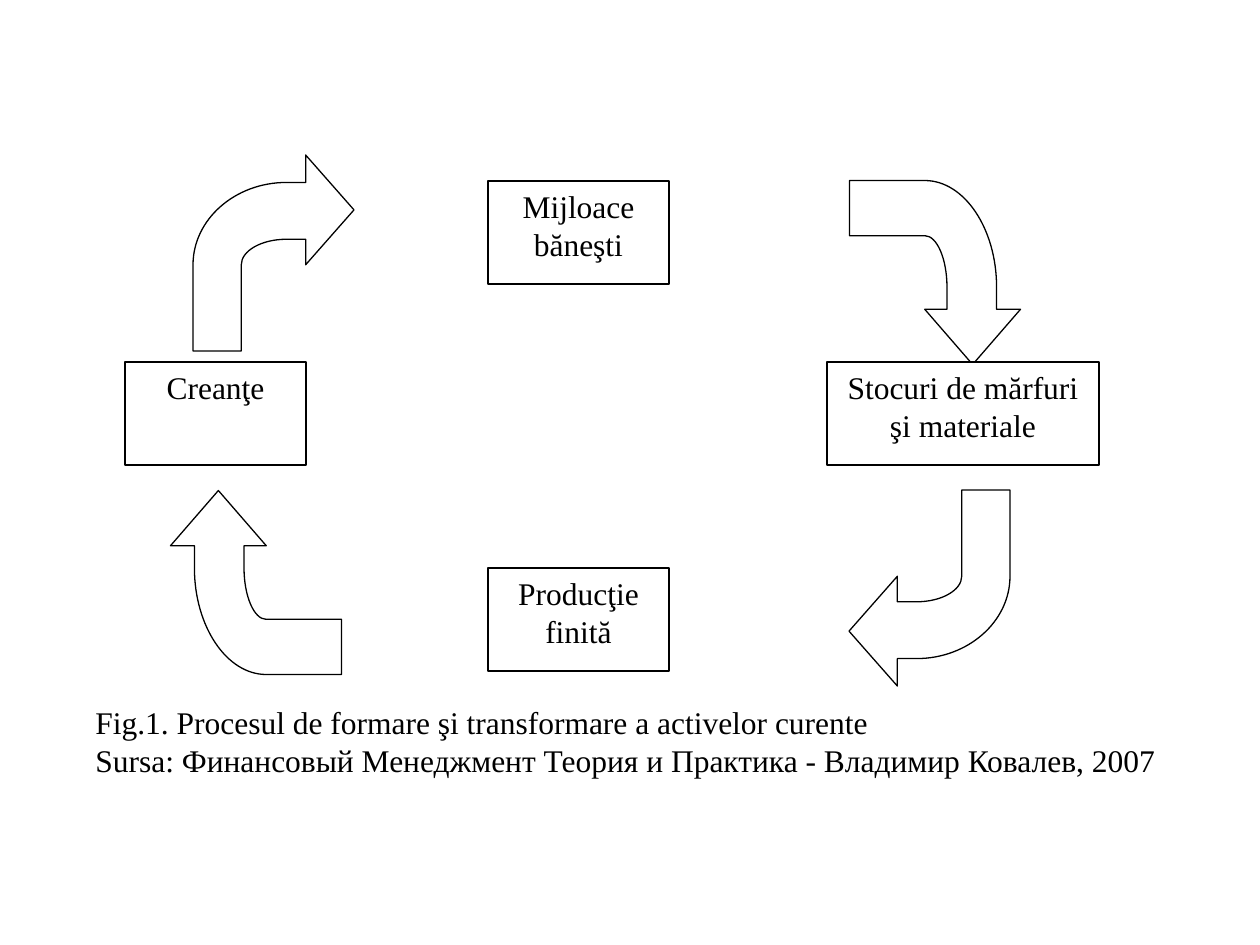
from lxml.etree import Element
from pptx import Presentation
from pptx.dml.color import RGBColor
from pptx.enum.shapes import MSO_SHAPE
from pptx.enum.text import MSO_ANCHOR, PP_ALIGN
from pptx.oxml.ns import qn
from pptx.util import Emu, Pt

PX = 914400 // 126
COLORS = {"paper": "FFFFFF", "ink": "000000"}
FONT = "Times New Roman"
ROUNDING = 0.55
ARROW_OUTLINE = [
    (1, 0.28), (0.7, 0), (0.7, 0.14), (0.58, 0.14), (0, 0.56), (0, 1),
    (0.3, 1), (0.3, 0.56), (0.58, 0.43), (0.7, 0.43), (0.7, 0.56),
]
BENDS = {4: (0, 0.14), 8: (0.3, 0.43)}
STAGES = [
    ("Mijloace băneşti", (488, 181, 181, 103)),
    ("Stocuri de mărfuri şi materiale", (827, 362, 272, 103)),
    ("Producţie finită", (488, 568, 181, 103)),
    ("Creanţe", (125, 362, 181, 103)),
]
ARROWS = [
    ((193, 155, 161, 196), 0),
    ((843, 187, 184, 171), 90),
    ((164, 497, 184, 171), 270),
    ((849, 490, 161, 196), 180),
]
CAPTION = [
    "Fig.1. Procesul de formare şi transformare a activelor curente",
    "Sursa: Финансовый Менеджмент Теория и Практика - Владимир Ковалев, 2007",
]


def color(name):
    """Return the named colour."""
    return RGBColor.from_string(COLORS[name])


def style_shape(shape, line="ink"):
    """Give a shape a plain fill and a thin outline."""
    shape.shadow.inherit = False
    shape.fill.solid()
    shape.fill.fore_color.rgb = color("paper")
    shape.line.color.rgb = color(line)
    shape.line.width = Pt(0.75)


def toward(point, corner):
    """Return the curve handle between a point and the corner of its bend."""
    return tuple(start + ROUNDING * (end - start) for start, end in zip(point, corner))


def round_bends(arrow, width, height):
    """Turn the straight segments at the bends into curves."""
    segments = list(arrow.element.iter(qn("a:lnTo")))
    for index, corner in BENDS.items():
        segment = segments[index - 1]
        segment.tag = qn("a:cubicBezTo")
        for position, point in enumerate(ARROW_OUTLINE[index - 1:index + 1]):
            x, y = toward(point, corner)
            handle = Element(qn("a:pt"), x=str(round(x * width * PX)), y=str(round(y * height * PX)))
            segment.insert(position, handle)


def add_bent_arrow(slide, box, rotation):
    """Draw a curved arrow in the box and turn it."""
    left, top, width, height = box
    points = [(round((left + x * width) * PX), round((top + y * height) * PX))
              for x, y in ARROW_OUTLINE]
    builder = slide.shapes.build_freeform(*points[0])
    builder.add_line_segments(points[1:], close=True)
    arrow = builder.convert_to_shape()
    round_bends(arrow, width, height)
    arrow.rotation = rotation
    style_shape(arrow)


def add_text_box(slide, box, lines, align=PP_ALIGN.CENTER, line="ink"):
    """Place a bordered rectangle with one paragraph for each line."""
    shape = slide.shapes.add_shape(MSO_SHAPE.RECTANGLE, *(Emu(value * PX) for value in box))
    style_shape(shape, line)
    frame = shape.text_frame
    frame.word_wrap = True
    frame.vertical_anchor = MSO_ANCHOR.TOP
    frame.text = "\n".join(lines)
    for paragraph in frame.paragraphs:
        paragraph.alignment = align
        for run in paragraph.runs:
            run.font.name = FONT
            run.font.size = Pt(18)
            run.font.color.rgb = color("ink")


def add_cycle(slide):
    """Place the arrows and stages of the cycle."""
    for box, rotation in ARROWS:
        add_bent_arrow(slide, box, rotation)
    for text, box in STAGES:
        add_text_box(slide, box, [text])


def main():
    """Build and save the slide."""
    presentation = Presentation()
    presentation.slide_width = Emu(1260 * PX)
    presentation.slide_height = Emu(945 * PX)
    slide = presentation.slides.add_slide(presentation.slide_layouts[6])
    add_cycle(slide)
    add_text_box(slide, (83, 697, 1106, 103), CAPTION, PP_ALIGN.LEFT, "paper")
    presentation.save("out.pptx")


if __name__ == "__main__":
    main()
